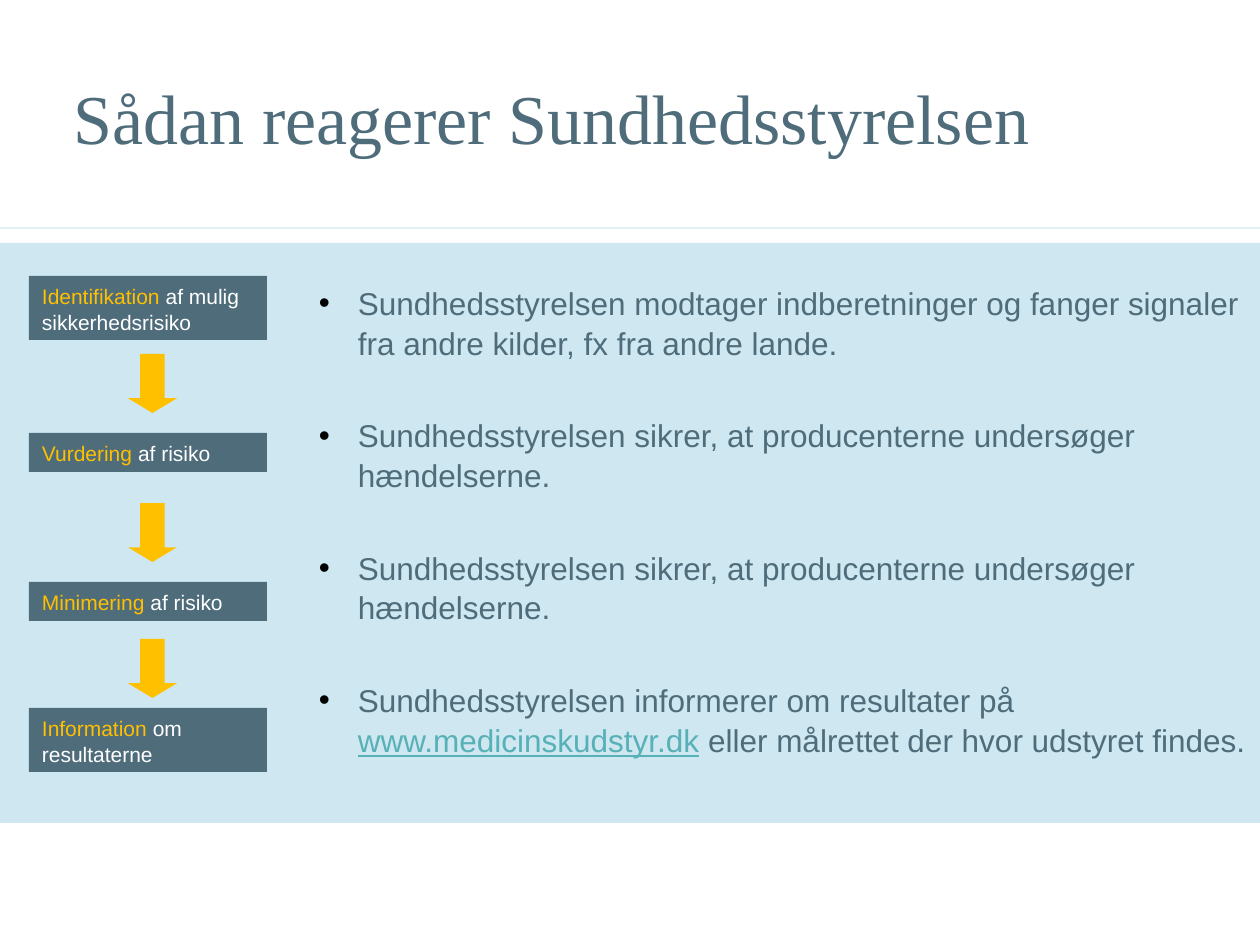
import pptx
import pptx.dml.color
import pptx.enum.shapes
import pptx.enum.text
import pptx.oxml.ns
import pptx.util
from lxml import etree

RGB = pptx.dml.color.RGBColor
SHAPES = pptx.enum.shapes.MSO_SHAPE
SLATE = RGB(0x4F, 0x6C, 0x7B)
AMBER = RGB(0xFF, 0xC0, 0x00)
WHITE = RGB(0xFF, 0xFF, 0xFF)
BLACK = RGB(0x00, 0x00, 0x00)
TEAL = RGB(0x57, 0xB1, 0xB7)
PALE_BLUE = RGB(0xCE, 0xE7, 0xF0)
RULE_BLUE = RGB(0xE2, 0xF1, 0xF6)

PX_PER_INCH = 126
SLIDE_W, SLIDE_H = 1260, 945
STEP_X, STEP_W = 29, 238
ARROW_X, ARROW_W, ARROW_H = 128, 49, 59

# top, height, highlighted words, remaining words
STEPS = [
    (276, 64, "Identifikation", " af mulig sikkerhedsrisiko"),
    (433, 39, "Vurdering", " af risiko"),
    (582, 39, "Minimering", " af risiko"),
    (708, 64, "Information", " om resultaterne"),
]
ARROW_TOPS = [354, 503, 639]

CHECK = "Sundhedsstyrelsen sikrer, at producenterne undersøger hændelserne."
BULLETS = [
    [("Sundhedsstyrelsen modtager indberetninger og fanger signaler "
      "fra andre kilder, fx fra andre lande.", SLATE)],
    [(CHECK, SLATE)],
    [(CHECK, SLATE)],
    [("Sundhedsstyrelsen informerer om resultater på ", SLATE),
     ("www.medicinskudstyr.dk", TEAL),
     (" eller målrettet der hvor udstyret findes.", SLATE)],
]


def px(length):
    return pptx.util.Emu(round(length * 914400 / PX_PER_INCH))


class SlideBuilder:
    body_font = "Arial"
    title_font = "Times New Roman"
    line_spacing = 1.05

    def __init__(self, page):
        self.page = page

    def shape(self, kind, x, y, w, h, color):
        item = self.page.shapes.add_shape(kind, px(x), px(y), px(w), px(h))
        item.shadow.inherit = False
        item.fill.solid()
        item.fill.fore_color.rgb = color
        item.line.fill.background()
        return item

    def rule(self, y, color):
        line = self.page.shapes.add_connector(
            pptx.enum.shapes.MSO_CONNECTOR.STRAIGHT, 0, px(y), px(SLIDE_W), px(y))
        line.line.color.rgb = color
        line.line.width = pptx.util.Pt(1)
        etree.SubElement(line.element.spPr, pptx.oxml.ns.qn("a:effectLst"))

    def frame(self, item, inset_x=0, inset_y=0):
        """Make the item's text wrap from the top with the given insets."""
        frame = item.text_frame
        frame.word_wrap = True
        frame.vertical_anchor = pptx.enum.text.MSO_ANCHOR.TOP
        frame.margin_left = frame.margin_right = px(inset_x)
        frame.margin_top = frame.margin_bottom = px(inset_y)
        return frame

    def text_box(self, x, y, w, h):
        return self.frame(self.page.shapes.add_textbox(px(x), px(y), px(w), px(h)))

    def add_spans(self, para, spans, size, font):
        para.alignment = pptx.enum.text.PP_ALIGN.LEFT
        para.font.size = pptx.util.Pt(size)
        para.font.name = font
        for text, color in spans:
            span = para.add_run()
            span.text = text
            span.font.color.rgb = color
            if color == TEAL:
                span.font.underline = True

    def title(self, text):
        frame = self.text_box(74, 74, 1111, 82)
        self.add_spans(frame.paragraphs[0], [(text, SLATE)], 40, self.title_font)

    def step(self, y, h, highlight, rest):
        box = self.shape(SHAPES.RECTANGLE, STEP_X, y, STEP_W, h, SLATE)
        para = self.frame(box, 13, 6).paragraphs[0]
        para.line_spacing = self.line_spacing
        self.add_spans(para, [(highlight, AMBER), (rest, WHITE)], 12, self.body_font)

    def arrow(self, y):
        arrow = self.shape(SHAPES.DOWN_ARROW, ARROW_X, y, ARROW_W, ARROW_H, AMBER)
        arrow.adjustments[1] = 0.3

    def bullet_mark(self, para, indent):
        qn = pptx.oxml.ns.qn
        props = para._p.get_or_add_pPr()
        props.set("marL", str(px(indent)))
        props.set("indent", str(-px(indent)))
        color = etree.SubElement(props, qn("a:buClr"))
        etree.SubElement(color, qn("a:srgbClr"), val=str(BLACK))
        etree.SubElement(props, qn("a:buFont"), typeface=self.body_font)
        etree.SubElement(props, qn("a:buChar"), char="•")

    def bullets(self, items):
        frame = self.text_box(319, 282, 935, 480)
        for index, spans in enumerate(items):
            para = frame.add_paragraph() if index else frame.paragraphs[0]
            self.bullet_mark(para, 39)
            para.line_spacing = self.line_spacing
            if index:
                para.space_before = pptx.util.Pt(30.3)
            self.add_spans(para, spans, 18, self.body_font)


def main():
    deck = pptx.Presentation()
    deck.slide_width, deck.slide_height = px(SLIDE_W), px(SLIDE_H)
    builder = SlideBuilder(deck.slides.add_slide(deck.slide_layouts[6]))

    builder.shape(SHAPES.RECTANGLE, 0, 243, SLIDE_W, 580, PALE_BLUE)
    builder.rule(228, RULE_BLUE)
    builder.bullets(BULLETS)
    for step in STEPS:
        builder.step(*step)
    for top in ARROW_TOPS:
        builder.arrow(top)
    builder.title("Sådan reagerer Sundhedsstyrelsen")

    deck.save("out.pptx")


if __name__ == "__main__":
    main()
